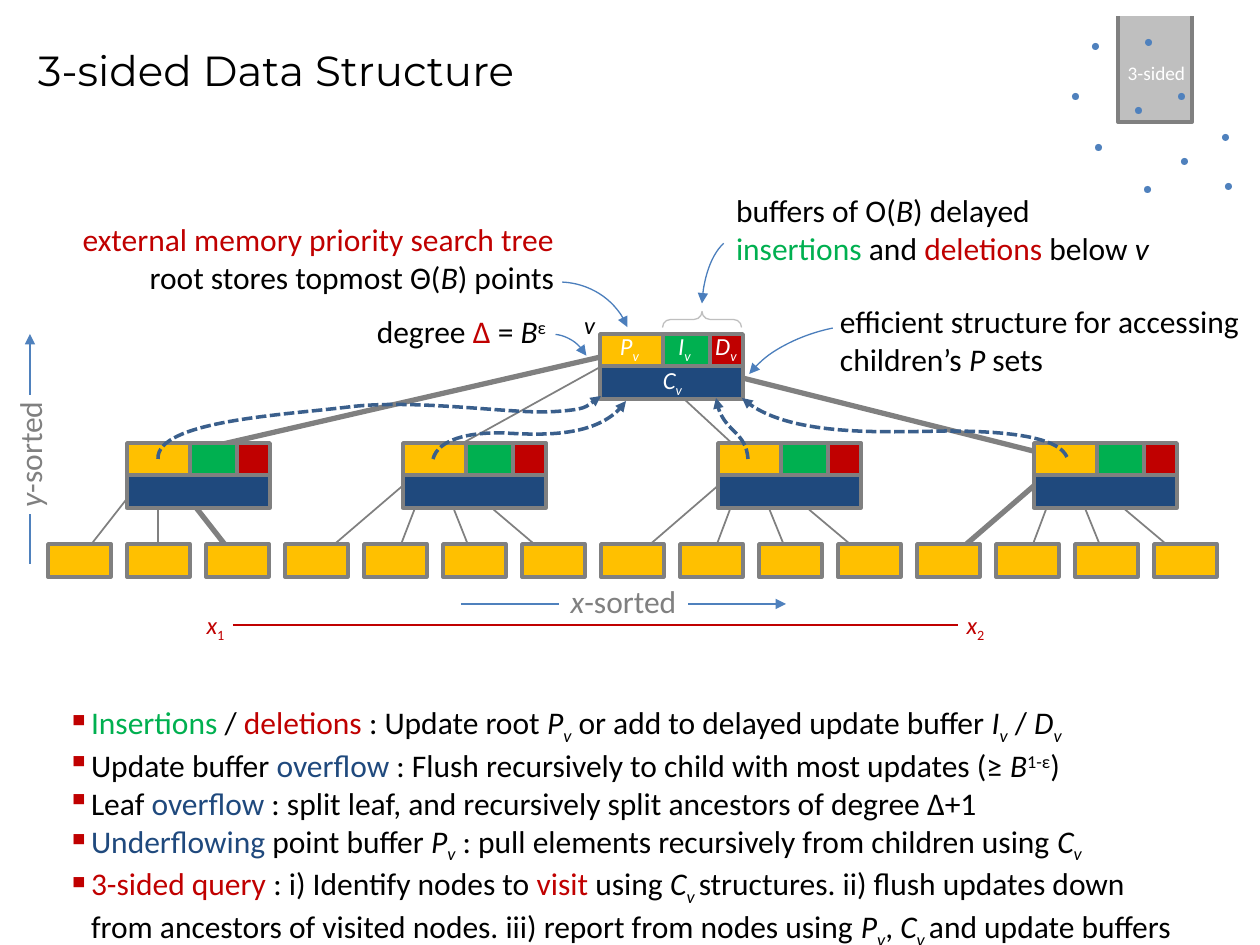
from pptx import Presentation
from pptx.dml.color import RGBColor
from pptx.enum.dml import MSO_LINE
from pptx.enum.shapes import MSO_CONNECTOR, MSO_SHAPE
from pptx.enum.text import MSO_ANCHOR, PP_ALIGN
from pptx.oxml.ns import qn
from pptx.util import Pt
from lxml import etree

RECT, OVAL, ARC, BRACE = MSO_SHAPE.RECTANGLE, MSO_SHAPE.OVAL, MSO_SHAPE.ARC, MSO_SHAPE.LEFT_BRACE
STRAIGHT, DASH = MSO_CONNECTOR.STRAIGHT, MSO_LINE.SQUARE_DOT
LEFT, CENTER, RIGHT = PP_ALIGN.LEFT, PP_ALIGN.CENTER, PP_ALIGN.RIGHT
TOP, MIDDLE = MSO_ANCHOR.TOP, MSO_ANCHOR.MIDDLE

BLACK = RGBColor(0x00, 0x00, 0x00)
WHITE = RGBColor(0xFF, 0xFF, 0xFF)
GRAY = RGBColor(0x80, 0x80, 0x80)
SILVER = RGBColor(0xBF, 0xBF, 0xBF)
GOLD = RGBColor(0xFF, 0xC0, 0x00)
GREEN = RGBColor(0x00, 0xB0, 0x50)
RED = RGBColor(0xC0, 0x00, 0x00)
NAVY = RGBColor(0x1F, 0x49, 0x7D)
BLUE = RGBColor(0x4F, 0x81, 0xBD)
ARC_BLUE = RGBColor(0x4B, 0x7E, 0xBC)
DASH_BLUE = RGBColor(0x3A, 0x5F, 0x8C)
MARKS = {"r": RED, "g": GREEN, "n": NAVY}
BASELINES = {"_": "-25000", "^": "30000"}
SCALE = 914400 / 126


def px(n):
    return round(n * SCALE)


def style(sp, fill=None, line=None, width=2, arrow=False):
    sp.shadow.inherit = False
    if fill is None:
        sp.fill.background()
    else:
        sp.fill.solid()
        sp.fill.fore_color.rgb = fill
    if line is None:
        sp.line.fill.background()
    else:
        set_line(sp, line, width, arrow)


def set_line(sp, color, width, arrow=False, dash=None):
    sp.line.color.rgb = color
    sp.line.width = Pt(width)
    if dash is not None:
        sp.line.dash_style = dash
    if arrow:
        ln = sp._element.spPr.find(qn("a:ln"))
        etree.SubElement(ln, qn("a:tailEnd"), type="triangle")


def add_shape(s, kind, x, y, w, h, **look):
    sp = s.shapes.add_shape(kind, px(x), px(y), px(w), px(h))
    style(sp, **look)
    return sp


def add_line(s, x1, y1, x2, y2, color, width=0.75, arrow=False):
    sp = s.shapes.add_connector(STRAIGHT, px(x1), px(y1), px(x2), px(y2))
    set_line(sp, color, width, arrow)
    etree.SubElement(sp._element.spPr, qn("a:effectLst"))


def add_arc(s, x, y, w, h, rotation, end, flip_h=False):
    sp = add_shape(s, ARC, x, y, w, h, line=ARC_BLUE, width=0.75, arrow=True)
    sp.adjustments[0], sp.adjustments[1] = 168.745, end
    sp.rotation = rotation
    xfrm = sp._element.spPr.find(qn("a:xfrm"))
    xfrm.set("flipV", "1")
    if flip_h:
        xfrm.set("flipH", "1")


def add_curve(s, x, y, points):
    pts = [(x + dx, y + dy) for dx, dy in points]
    builder = s.shapes.build_freeform(*pts[0], scale=SCALE)
    builder.add_line_segments(pts[1:], close=False)
    sp = builder.convert_to_shape()
    style(sp)
    set_line(sp, DASH_BLUE, 2, True, DASH)
    path = next(sp._element.iter(qn("a:path")))
    for i, seg in enumerate(path.findall(qn("a:lnTo"))):
        if i % 3 == 0:
            bezier = etree.SubElement(path, qn("a:cubicBezTo"))
        bezier.append(seg[0])
        path.remove(seg)


def fill_paragraph(p, runs, size, color, font="Calibri"):
    for text, marks in runs:
        r = p.add_run()
        r.text = text.rstrip("\n")
        r.font.name, r.font.size = font, Pt(size)
        r.font.color.rgb = next((MARKS[m] for m in marks if m in MARKS), color)
        r.font.italic = "i" in marks
        for m in marks:
            if m in BASELINES:
                r.font._element.set("baseline", BASELINES[m])
        if text.endswith("\n"):
            p.add_line_break()


def set_frame(sp, inset, anchor=TOP):
    tf = sp.text_frame
    tf.word_wrap = True
    tf.margin_left = tf.margin_right = px(inset)
    tf.margin_top = tf.margin_bottom = px(6)
    tf.vertical_anchor = anchor
    return tf


def add_text(s, x, y, w, h, runs, size=18, color=BLACK, align=LEFT, inset=13, font="Calibri"):
    sp = s.shapes.add_textbox(px(x), px(y), px(w), px(h))
    p = set_frame(sp, inset).paragraphs[0]
    p.alignment = align
    fill_paragraph(p, runs, size, color, font)


def add_label(s, x, y, w, h, letter, sub="", sub_marks="i_", color=WHITE):
    runs = [(letter, "i")] + ([(sub, sub_marks)] if sub else [])
    add_text(s, x, y, w, h, runs, 14, color, CENTER, 0)


def add_axis_name(s, x, y, w, h, letter, rotation=0):
    sp = add_shape(s, RECT, x, y, w, h, fill=WHITE, line=WHITE)
    sp.rotation = rotation
    p = set_frame(sp, 0, MIDDLE).paragraphs[0]
    p.alignment = CENTER
    fill_paragraph(p, [(letter, "i"), ("-sorted", "")], 18, GRAY)


def node(s, x, y):
    for dx, dy, w, fill in ((0, 0, 63, GOLD), (63, 0, 47, GREEN), (110, 0, 33, RED), (0, 32, 143, NAVY)):
        add_shape(s, RECT, x + dx, y + dy, w, 33, fill=fill, line=GRAY)


def tree(s, x, y):
    children = [(79, 3), (355, 4), (670, 4), (986, 4)]
    root, level, leaf_y, step = 552, 109, 210, 79
    thick_children, thick_leaves = (0, 3), (2, 11)
    parents = [c for c, (_, count) in enumerate(children) for _ in range(count)]
    for c, (dx, _) in enumerate(children):
        add_line(s, x + dx + 31, y + level + 16, x + root + 31, y + 16, GRAY, 3 if c in thick_children else 1)
    for i, c in enumerate(parents):
        add_line(s, x + i * step + 31, y + leaf_y + 16, x + children[c][0] + 31, y + level + 16,
                 GRAY, 3 if i in thick_leaves else 1)
    for i in range(len(parents)):
        add_shape(s, RECT, x + i * step, y + leaf_y, 63, 33, fill=GOLD, line=GRAY)
    for dx, _ in children:
        node(s, x + dx, y + level)
    node(s, x + root, y)
    for letter, dx, dy, w in (("P", 7, -9, 45), ("I", 65, -9, 39), ("D", 102, -9, 48), ("C", 50, 25, 45)):
        add_label(s, x + root + dx, y + dy, w, 43, letter, "v")
    add_label(s, x + root - 29, y - 30, 37, 43, "v", color=BLACK)
    for points in (
        [(385, 125), (390, 106), (419, 98), (456, 99), (492, 101), (553, 104), (578, 67)],
        [(110, 125), (108, 87), (236, 81), (301, 73), (365, 65), (457, 79), (499, 78), (542, 76), (553, 62), (553, 62)],
        [(700, 125), (698, 98), (673, 98), (668, 64)],
        [(1019, 123), (1010, 103), (960, 97), (898, 97), (837, 98), (736, 103), (694, 64)],
    ):
        add_curve(s, x, y, points)


def annotations(s, x, y):
    add_text(s, x, y + 29, 523, 89, [("external memory priority search tree ", "r"), ("root stores topmost Θ(", ""),
             ("B", "i"), (") points", "")], align=RIGHT)
    add_arc(s, x + 439, y + 97, 149, 141, 172.6, 208.407, True)
    add_text(s, x + 310, y + 121, 205, 50, [("degree ", ""), ("Δ ", "r"), ("= ", ""), ("B", "i"), ("ε", "^")],
             align=RIGHT)
    add_arc(s, x + 468, y + 149, 81, 91, 172.6, 199.36, True)
    add_text(s, x + 679, y, 459, 89, [("buffers of O(", ""), ("B", "i"), (") delayed \n", ""), ("insertions", "g"),
             (" and ", ""), ("deletions ", "r"), ("below ", ""), ("v", "i")])
    add_arc(s, x + 658, y + 51, 87, 173, 175.8, 199.36)
    brace = add_shape(s, BRACE, x + 650, y + 95, 16, 79, line=SILVER, width=0.75)
    brace.adjustments[0], brace.adjustments[1] = 0.5, 0.5
    brace.rotation = 90
    add_text(s, x + 783, y + 111, 433, 89, [("efficient structure for accessing children’s ", ""), ("P", "i"),
             (" sets", "")])
    add_arc(s, x + 691, y + 140, 244, 150, 172.6, 203.419)


def query_range(s, x, y):
    for dx, digit in ((0, "1"), (760, "2")):
        add_label(s, x + dx, y, 35, 44, "x", digit, "_", RED)
    add_line(s, x + 35, y + 21, x + 760, y + 21, RED)


def axes(s, x, y):
    add_line(s, x + 431, y + 270, x + 756, y + 270, BLUE, arrow=True)
    add_axis_name(s, x + 531, y + 252, 125, 30, "x")
    add_line(s, x, y + 230, x, y, BLUE, arrow=True)
    add_axis_name(s, x - 58, y + 104, 115, 33, "y", 270)


def point_set(s, x, y):
    builder = s.shapes.build_freeform(x + 46, y, scale=SCALE)
    builder.add_line_segments([(x + 46, y + 106), (x + 120, y + 106), (x + 120, y)], close=False)
    style(builder.convert_to_shape(), SILVER, GRAY, 2.25)
    add_text(s, x + 46, y + 39, 77, 37, [("3-sided", "")], 11, WHITE, CENTER, 0)
    for dx, dy in ((153, 167), (73, 23), (109, 142), (63, 91), (20, 27),
                   (0, 77), (150, 118), (23, 128), (72, 170), (106, 77)):
        add_shape(s, OVAL, x + dx, y + dy, 7, 7, fill=BLUE)


def operations(s, x, y, w, h):
    items = [
        [("Insertions ", "g"), ("/ ", ""), ("deletions ", "r"), (": Update root ", ""), ("P", "i"), ("v", "i_"),
         (" or add to delayed update buffer ", ""), ("I", "i"), ("v", "i_"), (" / ", ""), ("D", "i"), ("v", "i_")],
        [("Update buffer ", ""), ("overflow ", "n"), (": Flush recursively to child with most updates (≥ ", ""),
         ("B", "i"), ("1-ε", "^"), (")", "")],
        [("Leaf ", ""), ("overflow ", "n"), (": split leaf, and recursively split ancestors of degree Δ+1", "")],
        [("Underflowing ", "n"), ("point buffer ", ""), ("P", "i"), ("v", "i_"),
         (" : pull elements recursively from children using ", ""), ("C", "i"), ("v", "i_")],
        [("3-sided query ", "r"), (": i) Identify nodes to ", ""), ("visit ", "r"), ("using ", ""), ("C", "i"),
         ("v ", "i_"), ("structures. ii) flush updates down from ancestors of visited nodes. "
                        "iii) report from nodes using ", ""),
         ("P", "i"), ("v", "i_"), (", ", ""), ("C", "i"), ("v ", "i_"), ("and update buffers", "")],
    ]
    tf = set_frame(s.shapes.add_textbox(px(x), px(y), px(w), px(h)), 13)
    for i, runs in enumerate(items):
        p = tf.add_paragraph() if i else tf.paragraphs[0]
        pPr = p._p.get_or_add_pPr()
        pPr.set("marL", str(px(24)))
        pPr.set("indent", str(-px(24)))
        etree.SubElement(etree.SubElement(pPr, qn("a:buClr")), qn("a:srgbClr"), val=str(RED))
        etree.SubElement(pPr, qn("a:buChar"), char="▪")
        fill_paragraph(p, runs, 18, BLACK)


def main():
    prs = Presentation()
    prs.slide_width, prs.slide_height = px(1260), px(945)
    s = prs.slides.add_slide(prs.slide_layouts[6])
    add_text(s, 25, 38, 1172, 157, [("3-sided Data Structure", "")], 24, font="Montserrat")
    axes(s, 30, 334)
    tree(s, 48, 334)
    point_set(s, 1072, 16)
    annotations(s, 44, 185)
    query_range(s, 198, 604)
    operations(s, 54, 697, 1152, 242)
    prs.save("out.pptx")


if __name__ == "__main__":
    main()
